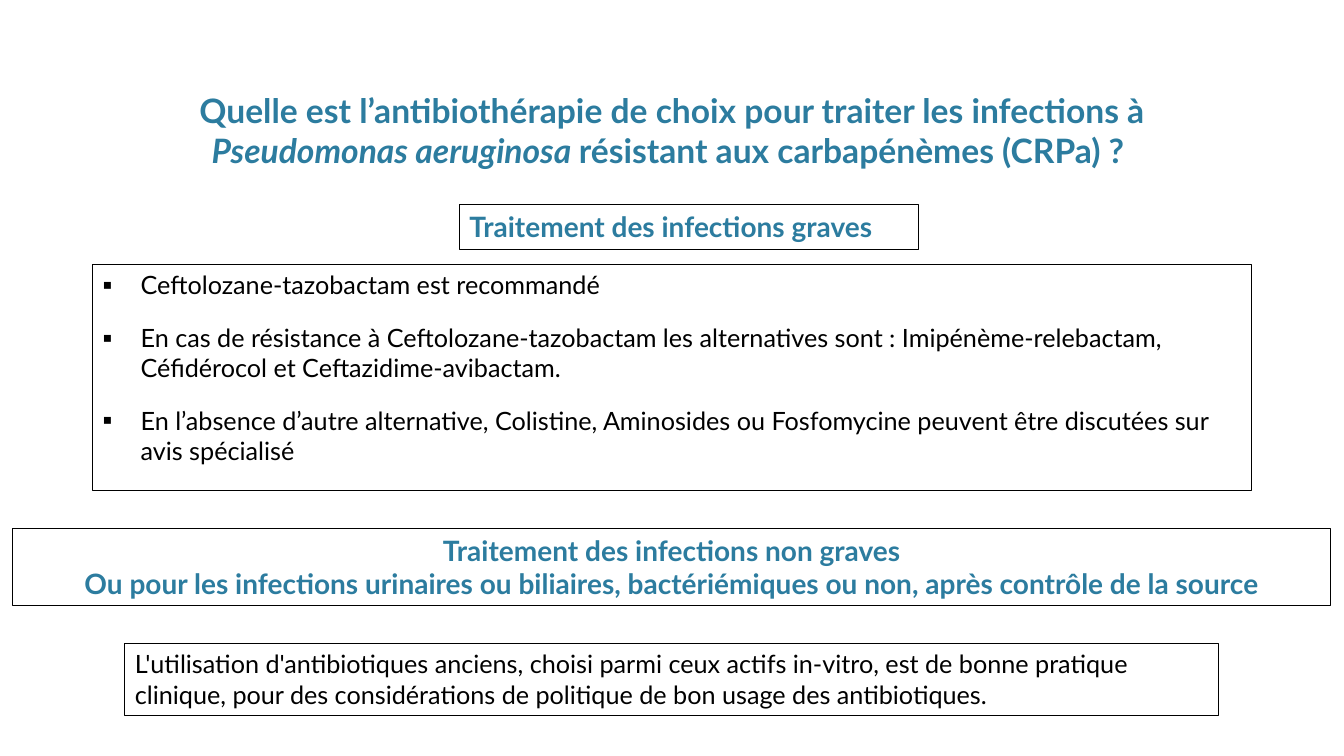
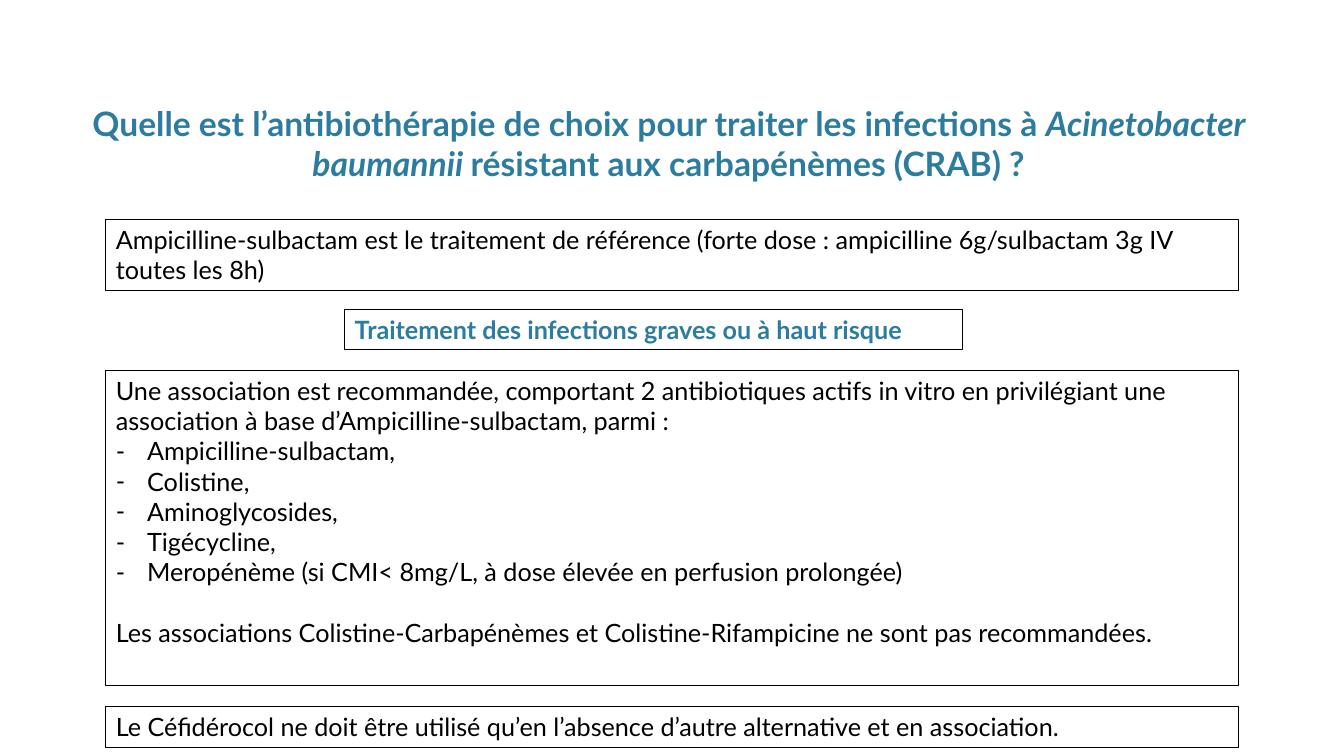
from lxml.etree import SubElement
from pptx import Presentation
from pptx.dml.color import RGBColor
from pptx.enum.text import MSO_ANCHOR, MSO_AUTO_SIZE, PP_ALIGN
from pptx.oxml.ns import qn
from pptx.util import Cm, Pt

FONT = "Lato"
BLUE = "2C7C9F"
BLACK = "000000"
SQUARE, DASH = "▪", "-"
INDENT = {SQUARE: Cm(0.96), DASH: Cm(0.79)}


def color(value):
    return RGBColor.from_string(value)


def bullet(para, char):
    """Give the paragraph a black bullet and a hanging indent."""
    props = para._p.get_or_add_pPr()
    props.set("marL", str(INDENT[char]))
    props.set("indent", str(-INDENT[char]))
    tint = SubElement(props, qn("a:buClr"))
    SubElement(tint, qn("a:srgbClr"), val=BLACK)
    if char == SQUARE:
        SubElement(props, qn("a:buSzPct"), val="110000")
    else:
        SubElement(props, qn("a:buFont"), typeface=FONT)
    SubElement(props, qn("a:buChar"), char=char)


class Deck:
    def __init__(self):
        self.prs = Presentation()
        self.prs.slide_width, self.prs.slide_height = Cm(33.87), Cm(19.05)

    def add(self, layout):
        self.slide = self.prs.slides.add_slide(self.prs.slide_layouts[layout])

    def place(self, shape, area):
        shape.left, shape.top, shape.width, shape.height = map(Cm, area)
        frame = shape.text_frame
        frame.word_wrap = True
        frame.auto_size = MSO_AUTO_SIZE.NONE
        return frame

    def style(self, para, size, tint, bold=False, align=PP_ALIGN.LEFT):
        para.alignment = align
        font = para.font
        font.name, font.size, font.bold = FONT, Pt(size), bold
        font.color.rgb = color(tint)

    def title(self, area, start, name, end):
        """Write the title with the species name in italics."""
        frame = self.place(self.slide.shapes.title, area)
        frame.vertical_anchor = MSO_ANCHOR.BOTTOM
        para = frame.paragraphs[0]
        for text in (start, name, end):
            run = para.add_run()
            run.text = text
            if text == name:
                run.font.italic = True
        self.style(para, 24, BLUE, True, PP_ALIGN.CENTER)

    def fill(self, shape, area, items, **look):
        """Frame the shape and write items of (text, bullet, space before)."""
        frame = self.place(shape, area)
        frame.vertical_anchor = MSO_ANCHOR.TOP
        shape.line.color.rgb = color(BLACK)
        shape.line.width = Pt(0.75)
        for i, (text, char, gap) in enumerate(items):
            para = frame.add_paragraph() if i else frame.paragraphs[0]
            para.text = text
            para.space_before = Pt(gap)
            if char:
                bullet(para, char)
            self.style(para, **look)

    def list(self, area, texts):
        items = [(text, SQUARE, 16 if i else 0) for i, text in enumerate(texts)]
        self.fill(self.slide.placeholders[1], area, items, size=18, tint=BLACK)

    def box(self, area, *items, size=18, tint=BLACK, **look):
        shape = self.slide.shapes.add_textbox(*map(Cm, area))
        items = [(item, None, 0) if isinstance(item, str) else item for item in items]
        self.fill(shape, area, items, size=size, tint=tint, **look)

    def head(self, area, *lines, size=20, align=PP_ALIGN.LEFT):
        self.box(area, *lines, size=size, tint=BLUE, bold=True, align=align)


def pseudomonas(deck):
    deck.add(1)
    deck.title((2.33, 1.93, 29.21, 2.49),
               "Quelle est l’antibiothérapie de choix pour traiter les infections à ",
               "Pseudomonas aeruginosa ",
               "résistant aux carbapénèmes (CRPa) ? ")
    deck.list((2.33, 6.67, 29.21, 5.69), [
        "Ceftolozane-tazobactam est recommandé",
        "En cas de résistance à Ceftolozane-tazobactam les alternatives sont : "
        "Imipénème-relebactam, Céfidérocol et Ceftazidime-avibactam.",
        "En l’absence d’autre alternative, Colistine, Aminosides ou Fosfomycine "
        "peuvent être discutées sur avis spécialisé",
    ])
    deck.head((11.58, 5.16, 11.58, 1.12), "Traitement des infections graves")
    deck.head((0.32, 13.31, 33.22, 1.96),
              "Traitement des infections non graves",
              "Ou pour les infections urinaires ou biliaires, bactériémiques ou non, "
              "après contrôle de la source", align=PP_ALIGN.CENTER)
    deck.box((3.15, 16.22, 27.56, 1.8),
             "L'utilisation d'antibiotiques anciens, choisi parmi ceux actifs in-vitro, "
             "est de bonne pratique clinique, pour des considérations de politique de "
             "bon usage des antibiotiques.")


def acinetobacter(deck):
    left, width = 2.67, 28.55
    drugs = ["Ampicilline-sulbactam,", "Colistine,", "Aminoglycosides,", "Tigécycline,",
             "Meropénème (si CMI< 8mg/L, à dose élevée en perfusion prolongée)"]
    deck.add(5)
    deck.title((1.85, 2.44, 30, 2.31),
               "Quelle est l’antibiothérapie de choix pour traiter les infections à ",
               "Acinetobacter baumannii ",
               "résistant aux carbapénèmes (CRAB) ?")
    deck.box((left, 5.52, width, 1.8),
             "Ampicilline-sulbactam est le traitement de référence (forte dose : "
             "ampicilline 6g/sulbactam 3g IV toutes les 8h)")
    deck.head((8.69, 7.8, 15.57, 1.02),
              "Traitement des infections graves ou à haut risque", size=18)
    deck.box((left, 9.33, width, 7.95),
             "Une association est recommandée, comportant 2 antibiotiques actifs in vitro "
             "en privilégiant une association à base d’Ampicilline-sulbactam, parmi :",
             *[(drug, DASH, 0) for drug in drugs],
             ("Les associations Colistine-Carbapénèmes et Colistine-Rifampicine "
              "ne sont pas recommandées.", None, 21.6))
    deck.box((left, 17.81, width, 1.02),
             "Le Céfidérocol ne doit être utilisé qu’en l’absence d’autre alternative "
             "et en association.")


def main():
    deck = Deck()
    pseudomonas(deck)
    acinetobacter(deck)
    deck.prs.save("out.pptx")


if __name__ == "__main__":
    main()
